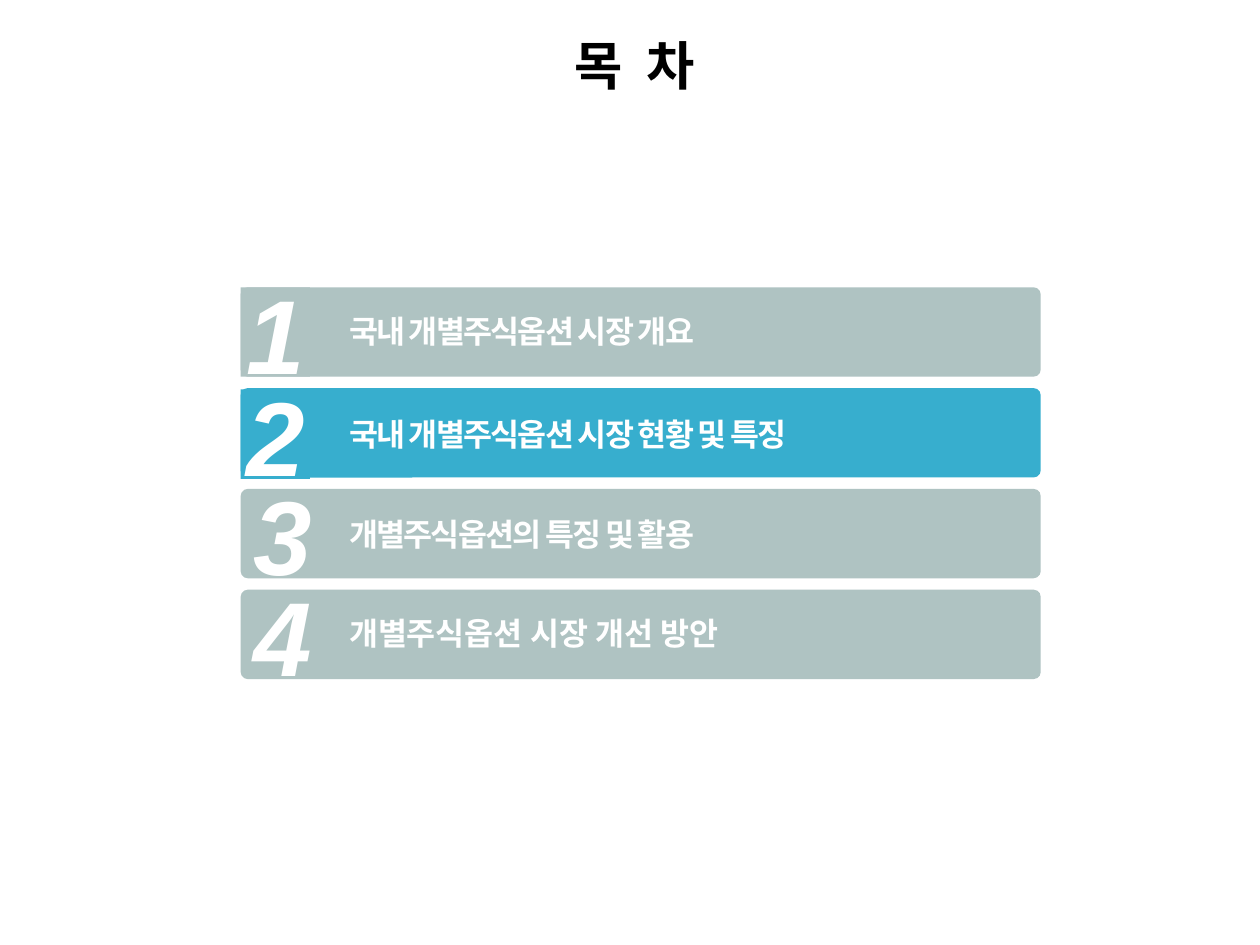
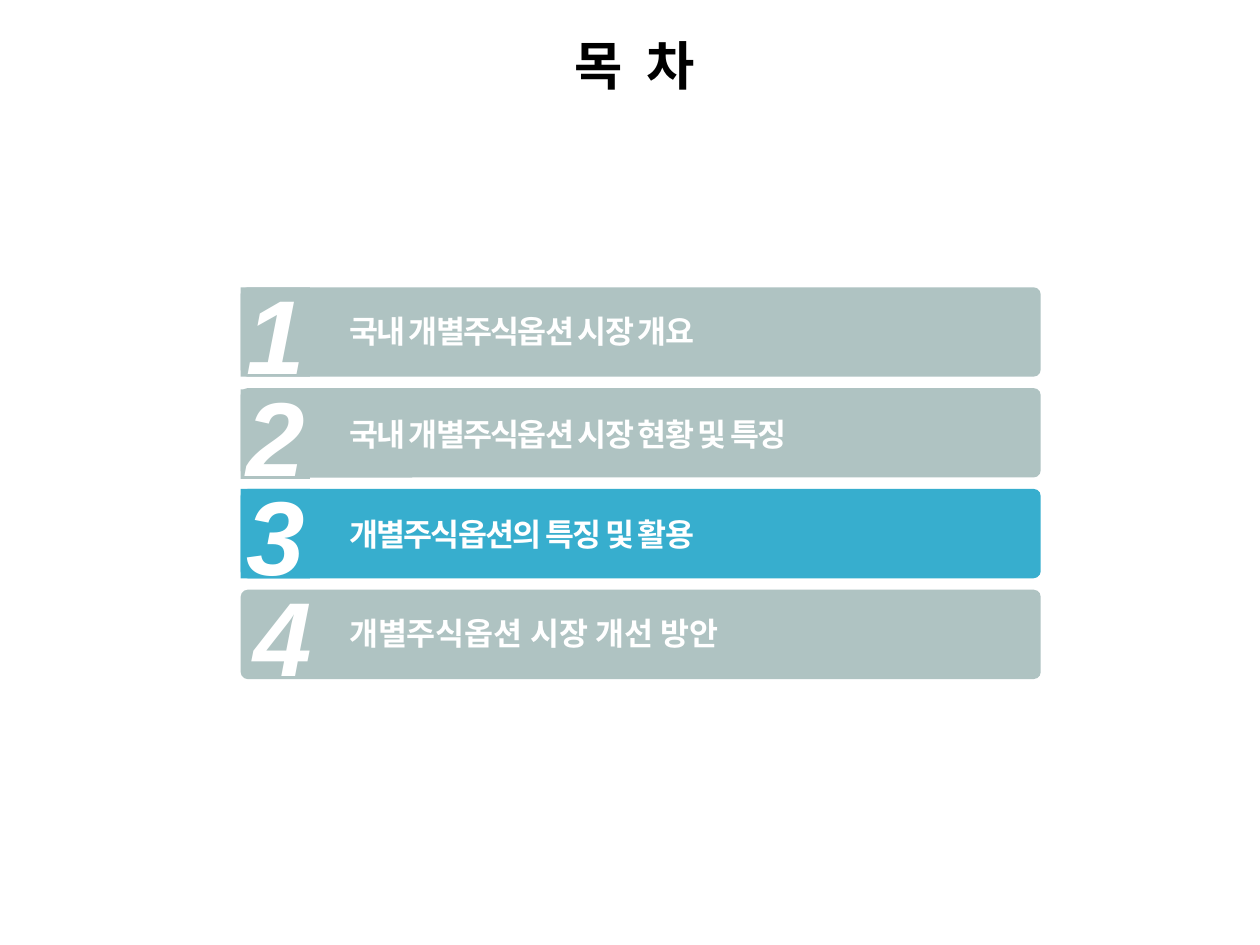
from pptx import Presentation
from pptx.dml.color import RGBColor
from pptx.enum import shapes, text
from pptx.util import Inches, Pt

FONT = "Arial"
WHITE, BLACK = "FFFFFF", "000000"
MUTED, ACTIVE = "AFC3C2", "37AECE"

TITLE = "목  차"
BAR_LEFT, BAR_TOP, BAR_WIDTH, BAR_HEIGHT = 1.91, 2.28, 6.35, 0.71
BAR_STEP = 0.8
LABEL_LEFT, LABEL_WIDTH, LABEL_HEIGHT = 2.77, 5.38, 0.3

# wording, number offset, label offset, letter spacing (1/100 pt)
CHAPTERS = [
    ("국내 개별주식옵션 시장 개요", 0, 0.2, -100),
    ("국내 개별주식옵션 시장 현황 및 특징", 0.01, 0.21, -100),
    ("개별주식옵션의 특징 및 활용", 0, 0.21, -100),
    ("개별주식옵션 시장 개선 방안", 0, 0.19, 0),
]
ALWAYS_BOXED = (1, 2)


def color(hex_value):
    return RGBColor.from_string(hex_value)


def add_block(container, kind, box, fill):
    """Add a flat shape without outline or shadow."""
    shape = container.add_shape(kind, *map(Inches, box))
    shape.shadow.inherit = False
    shape.fill.solid()
    shape.fill.fore_color.rgb = color(fill)
    shape.line.fill.background()
    return shape


def add_text(container, box, wording, size, font_color=WHITE, fill=None,
             align=text.PP_ALIGN.LEFT, anchor=text.MSO_ANCHOR.MIDDLE,
             wrap=True, italic=False, spacing=0):
    """Add bold one-line text, on a filled rectangle if a fill is given."""
    if fill:
        shape = add_block(container, shapes.MSO_SHAPE.RECTANGLE, box, fill)
    else:
        shape = container.add_textbox(*map(Inches, box))
    frame = shape.text_frame
    frame.word_wrap = wrap
    frame.vertical_anchor = anchor
    paragraph = frame.paragraphs[0]
    paragraph.alignment = align
    run = paragraph.add_run()
    run.text = wording
    if spacing:
        run._r.get_or_add_rPr().set("spc", str(spacing))
    font = paragraph.font
    font.name, font.size = FONT, Pt(size)
    font.bold, font.italic = True, italic
    font.color.rgb = color(font_color)
    return shape


def add_title(slide):
    title = add_text(slide.shapes, (0.26, 0, 9.55, 1.08), TITLE, 30, BLACK,
                     align=text.PP_ALIGN.CENTER)
    title.text_frame.paragraphs[0].line_spacing = 0.9


def add_chapter(slide, number, active):
    wording, number_offset, label_offset, spacing = CHAPTERS[number - 1]
    top = BAR_TOP + (number - 1) * BAR_STEP
    fill = ACTIVE if active else MUTED
    box_fill = fill if active or number in ALWAYS_BOXED else None
    group = slide.shapes.add_group_shape().shapes

    bar = add_block(group, shapes.MSO_SHAPE.ROUNDED_RECTANGLE,
                    (BAR_LEFT, top, BAR_WIDTH, BAR_HEIGHT), fill)
    bar.adjustments[0] = 0.08
    add_text(group, (BAR_LEFT, top + number_offset, 0.55, BAR_HEIGHT),
             str(number), 60, fill=box_fill, align=text.PP_ALIGN.CENTER,
             wrap=False, italic=True)
    label = add_text(group, (LABEL_LEFT, top + label_offset, LABEL_WIDTH, LABEL_HEIGHT),
                     wording, 18, fill=box_fill, anchor=text.MSO_ANCHOR.TOP,
                     spacing=spacing)
    frame = label.text_frame
    frame.margin_left = frame.margin_right = frame.margin_top = frame.margin_bottom = 0
    frame.auto_size = text.MSO_AUTO_SIZE.SHAPE_TO_FIT_TEXT


def add_contents_slide(presentation, active_number):
    slide = presentation.slides.add_slide(presentation.slide_layouts[6])
    add_title(slide)
    for number in range(1, len(CHAPTERS) + 1):
        add_chapter(slide, number, number == active_number)


def main():
    presentation = Presentation()
    presentation.slide_width = Inches(10)
    presentation.slide_height = Inches(7.5)
    for active_number in (2, 3):
        add_contents_slide(presentation, active_number)
    presentation.save("out.pptx")


if __name__ == "__main__":
    main()
